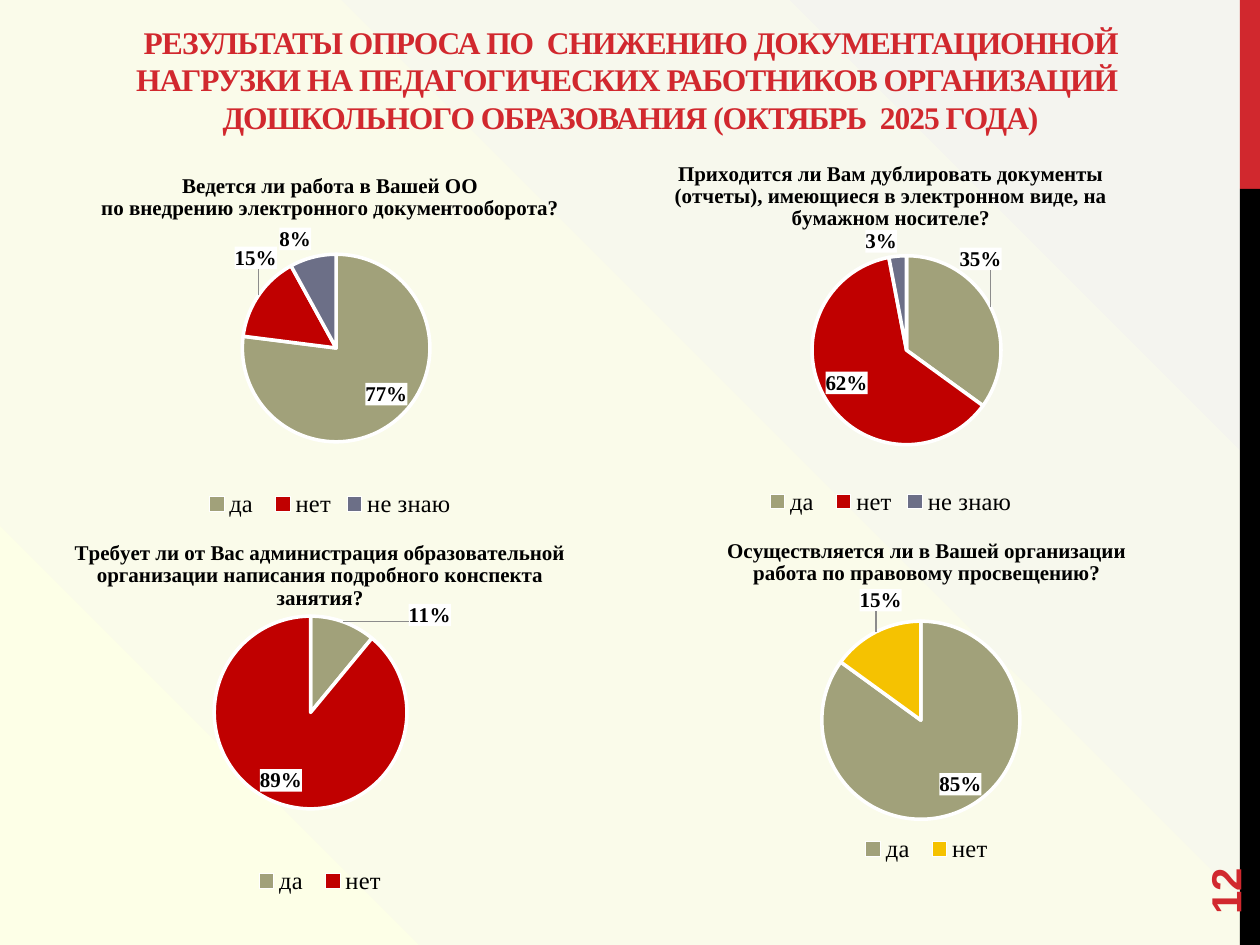
from copy import deepcopy

from pptx import Presentation
from pptx.chart.data import CategoryChartData
from pptx.dml.color import RGBColor
from pptx.enum.chart import XL_CHART_TYPE, XL_LABEL_POSITION, XL_LEGEND_POSITION
from pptx.enum.shapes import MSO_SHAPE
from pptx.enum.text import MSO_ANCHOR, MSO_AUTO_SIZE, PP_ALIGN
from pptx.oxml import parse_xml
from pptx.oxml.ns import nsdecls, qn
from pptx.util import Inches, Pt

SERIF, SANS = "Times New Roman", "Arial"
RED, BLACK, WHITE, GREY = "D1282E", "000000", "FFFFFF", "8C8C8C"
OLIVE, CRIMSON, SLATE, YELLOW = "A1A17A", "C00000", "6C6F87", "F5C201"

# Content
HEADING = [
    "РЕЗУЛЬТАТЫ ОПРОСА ПО  СНИЖЕНИЮ ДОКУМЕНТАЦИОННОЙ "
    "НАГРУЗКИ НА ПЕДАГОГИЧЕСКИХ РАБОТНИКОВ ОРГАНИЗАЦИЙ ",
    "ДОШКОЛЬНОГО ОБРАЗОВАНИЯ (ОКТЯБРЬ  2025 ГОДА)",
]
PAGE_NUMBER = "12"
ANSWERS = ["да ", "нет", "не знаю"]
BACKGROUND_STOPS = [(0, "FDFFE7"), (38, "FAFBEA"), (99, "F4F4EF")]
SIDE_BARS = [(0, 1.5, RED), (1.5, 6, BLACK)]  # top, height, colour

# box and plot: left, top, width, height (plot in chart fractions);
# moved: label offsets by answer index, in chart fractions
SURVEY = [
    dict(question=["Ведется ли работа в Вашей ОО",
                   "по внедрению электронного документооборота?"],
         shares=[0.77, 0.15, 0.08], colours=[OLIVE, CRIMSON, SLATE],
         box=(0.2, 1.23, 4.84, 2.92), plot=(0.11, 0.27, 0.8, 0.51),
         moved={1: (0.04, -0.06)}),
    dict(question=["Приходится ли Вам дублировать документы (отчеты), "
                   "имеющиеся в электронном виде, на бумажном носителе?"],
         shares=[0.35, 0.62, 0.03], colours=[OLIVE, CRIMSON, SLATE],
         box=(4.57, 1.13, 5, 3), plot=(0.08, 0.3, 0.89, 0.5),
         moved={0: (-0.06, -0.09), 2: (0, 0.01)}),
    dict(question=["Требует ли от Вас администрация образовательной "
                   "организации написания подробного конспекта занятия?"],
         shares=[0.11, 0.89], colours=[OLIVE, CRIMSON],
         box=(0.04, 4.14, 5, 3), plot=(0.03, 0.25, 0.91, 0.51),
         moved={0: (0.1, 0.03)}),
    dict(question=["Осуществляется ли в Вашей организации "
                   "работа по правовому просвещению?"],
         shares=[0.85, 0.15], colours=[OLIVE, YELLOW],
         box=(5.04, 4.13, 4.63, 2.76), plot=(0.01, 0.29, 0.96, 0.57),
         moved={1: (0.05, -0.04)}),
]


def rgb(colour):
    return RGBColor.from_string(colour)


def style(font, size, colour=BLACK, bold=False, face=SERIF):
    font.name, font.size, font.bold = face, Pt(size), bold
    font.color.rgb = rgb(colour)


def manual_layout(x, y, size=None):
    inner = '<c:layoutTarget val="inner"/>' if size else ""
    modes = '<c:xMode val="edge"/><c:yMode val="edge"/>' if size else ""
    extent = '<c:w val="{}"/><c:h val="{}"/>'.format(*size) if size else ""
    return parse_xml(
        f'<c:layout {nsdecls("c")}><c:manualLayout>{inner}{modes}'
        f'<c:x val="{x}"/><c:y val="{y}"/>{extent}</c:manualLayout></c:layout>')


def label_slices(series, moved):
    labels = series.data_labels
    labels.show_value = True
    labels.number_format, labels.number_format_is_linked = "0%", False
    labels.position = XL_LABEL_POSITION.BEST_FIT
    style(labels.font, 12, bold=True)
    group = labels._element
    group.find(qn("c:numFmt")).addnext(parse_xml(
        f'<c:spPr {nsdecls("c", "a")}><a:solidFill><a:srgbClr val="{WHITE}"/>'
        '</a:solidFill></c:spPr>'))
    leader = group.find(qn("c:showLeaderLines"))
    if leader is None:
        leader = parse_xml(f'<c:showLeaderLines {nsdecls("c")}/>')
        group.append(leader)
    leader.set("val", "1")
    leader.addnext(parse_xml(
        f'<c:leaderLines {nsdecls("c", "a")}><c:spPr><a:ln w="9525"><a:solidFill>'
        f'<a:srgbClr val="{GREY}"/></a:solidFill></a:ln></c:spPr></c:leaderLines>'))

    shared = [group.find(qn(tag)) for tag in ("c:numFmt", "c:spPr", "c:txPr")]
    for index, offset in moved.items():
        series.points[index].data_label.position = XL_LABEL_POSITION.BEST_FIT
        for label in group.findall(qn("c:dLbl")):
            slot = label.find(qn("c:idx"))
            if slot.get("val") != str(index):
                continue
            for old in ("c:spPr", "c:txPr"):
                for part in label.findall(qn(old)):
                    label.remove(part)
            for part in reversed([manual_layout(*offset), *map(deepcopy, shared)]):
                slot.addnext(part)


def add_pie(slide, question, shares, colours, box, plot, moved):
    data = CategoryChartData(number_format="0%")
    data.categories = ANSWERS[:len(shares)]
    data.add_series("Series 1", shares)
    chart = slide.shapes.add_chart(
        XL_CHART_TYPE.PIE, *map(Inches, box), data).chart
    style(chart.font, 10, face=SANS)

    # Question above the pie
    chart.has_title = True
    frame = chart.chart_title.text_frame
    for number, line in enumerate(question):
        paragraph = frame.add_paragraph() if number else frame.paragraphs[0]
        run = paragraph.add_run()
        run.text = line
        style(run.font, 12, bold=True)
    chart.chart_title.include_in_layout = False

    # Legend below the pie
    chart.has_legend = True
    chart.legend.position = XL_LEGEND_POSITION.BOTTOM
    chart.legend.include_in_layout = False
    style(chart.legend.font, 14)

    # Slices
    pie = chart.plots[0]
    pie.vary_by_categories = True
    series = pie.series[0]
    for index, colour in enumerate(colours):
        slice_format = series.points[index].format
        slice_format.fill.solid()
        slice_format.fill.fore_color.rgb = rgb(colour)
        slice_format.line.color.rgb = rgb(WHITE)
        slice_format.line.width = Pt(2)
    label_slices(series, moved)

    plot_area = chart._chartSpace.chart.plotArea
    for automatic in plot_area.findall(qn("c:layout")):
        plot_area.remove(automatic)
    plot_area.insert(0, manual_layout(*plot[:2], size=plot[2:]))


deck = Presentation()
deck.slide_width, deck.slide_height = Inches(10), Inches(7.5)
slide = deck.slides.add_slide(deck.slide_layouts[5])

# Background gradient spreading from the bottom left corner
slide.background.fill.solid()
background = slide._element.find(".//" + qn("p:bgPr"))
stops = "".join(f'<a:gs pos="{at * 1000}"><a:srgbClr val="{colour}"/></a:gs>'
                for at, colour in BACKGROUND_STOPS)
background.replace(background[0], parse_xml(
    f'<a:gradFill {nsdecls("a")} rotWithShape="1"><a:gsLst>{stops}</a:gsLst>'
    '<a:path path="circle"><a:fillToRect t="100000" r="100000"/></a:path>'
    '</a:gradFill>'))

# Bars on the right edge
for top, height, colour in SIDE_BARS:
    bar = slide.shapes.add_shape(MSO_SHAPE.RECTANGLE, Inches(9.84), Inches(top),
                                 Inches(0.16), Inches(height))
    bar.shadow.inherit = False
    bar.fill.solid()
    bar.fill.fore_color.rgb = rgb(colour)
    bar.line.fill.background()

# Heading
heading = slide.shapes.title
heading.left, heading.top, heading.width, heading.height = map(
    Inches, (0.43, 0.15, 9.15, 0.98))
frame = heading.text_frame
frame.auto_size, frame.word_wrap = MSO_AUTO_SIZE.NONE, True
frame.vertical_anchor = MSO_ANCHOR.BOTTOM
frame.margin_left = frame.margin_right = Inches(0.3)
paragraph = frame.paragraphs[0]
paragraph.alignment, paragraph.line_spacing = PP_ALIGN.CENTER, 1.0
for number, line in enumerate(HEADING):
    if number:
        paragraph.add_line_break()
    run = paragraph.add_run()
    run.text = line
    style(run.font, 18, RED, bold=True)
    run.font._element.set("spc", "-60")

# Page number, turned upwards
page = slide.shapes.add_textbox(*map(Inches, (9, 6.44, 1.44, 0.4)))
page.rotation = 270
page.text_frame.word_wrap = True
page.text_frame.vertical_anchor = MSO_ANCHOR.MIDDLE
run = page.text_frame.paragraphs[0].add_run()
run.text = PAGE_NUMBER
style(run.font, 24, RED, bold=True, face=SANS)

# Survey charts
for item in SURVEY:
    add_pie(slide, **item)

deck.save("out.pptx")
